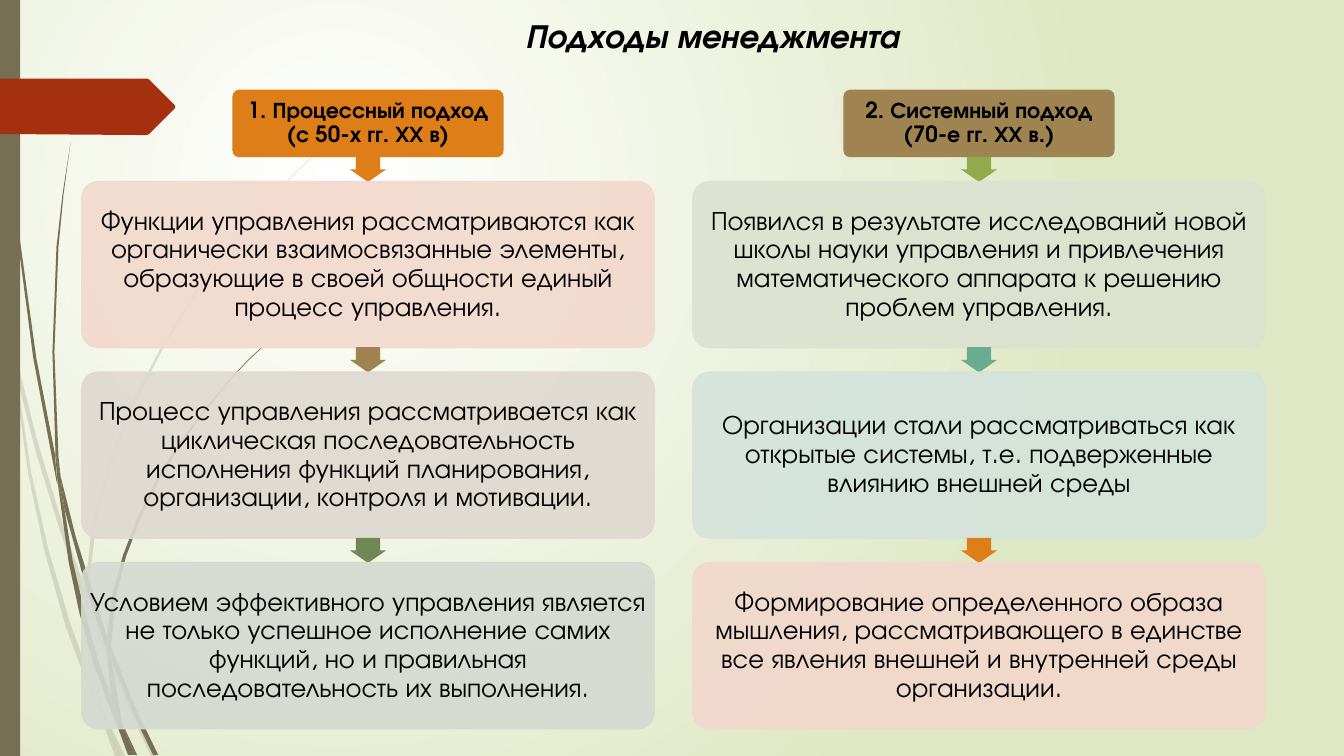
from lxml import etree
from pptx import Presentation
from pptx import util as u
from pptx.dml.color import RGBColor
from pptx.enum import shapes, text
from pptx.oxml import ns

COLORS = {
    "white": "FFFFFF", "lime": "DFE8C4", "ink": "000000", "stalk": "766F54", "red": "A53010",
    "orange": "DE7E18", "brown": "9F8351", "moss": "728653", "green": "92AA4C", "teal": "6AAC91",
    "pale rose": "F2D8CC", "pale sand": "DFD9D0", "pale grey": "D5D9D1",
    "pale olive": "DCE2D0", "pale mint": "D4E3DC",
}

# Outlines of the grass: x, y pairs in inches
PALE_GRASS = [
    [.11, 3.5, .09, 3.22, 0, 2.82, 0, 2.99, .1, 3.44],
    [.58, 5.22, .84, 5.99, .85, 5.86, .62, 5.2, .36, 4.34, .14, 3.45, .17, 3.76, .36, 4.5],
    [.92, 6.07, .88, 5.96, .88, 6.1, 1.23, 6.94, 1.5, 7.5, 1.55, 7.5, 1.27, 6.92],
    [1.19, 7.5, 1.24, 7.5, 1.05, 7.11],
    [.93, 6.83, .7, 6.19, .48, 5.45, .31, 4.69, .17, 3.76, .11, 3.5, .28, 4.7, .44, 5.46,
     .65, 6.21, .92, 6.93, 1.01, 7.14, .99, 7.07],
    [.84, 5.99, .87, 6.46, .93, 6.83, .96, 6.92, 1.05, 7.11, 1.03, 7.06, .91, 6.46, .88, 6.1,
     .88, 6.08],
    [.88, 5.84, .95, 5.22, 1.1, 4.62, 1.32, 4.04, 1.6, 3.49, 1.92, 2.96, 2.29, 2.45, 2.68, 1.98,
     2.9, 1.75, 3.12, 1.54, 3.12, 1.53, 2.89, 1.75, 2.68, 1.97, 2.28, 2.44, 1.9, 2.95,
     1.58, 3.48, 1.29, 4.03, 1.07, 4.61, .91, 5.22, .85, 5.84, .85, 5.86, .88, 5.96],
    [1.01, 7.14, 1.14, 7.5, 1.19, 7.5],
    [.88, 6.08, .88, 6.1, .88, 5.96, .85, 5.86, .84, 5.99],
    [.96, 6.92, .93, 6.83, .99, 7.07, 1.01, 7.14, 1.19, 7.5, 1.05, 7.11],
]
DARK_GRASS = [
    [.07, 1.1, .17, 2.33, .33, 3.55, .56, 4.77, .57, 4.81, .55, 4.57, .55, 4.53, .36, 3.55,
     .19, 2.32, .08, 1.09, .05, .48, .04, 0, .03, 0, .04, .48],
    [.88, 5.92, 1.06, 6.45, 1.06, 6.33, 1.06, 6.31, .93, 5.9, .75, 5.32, .6, 4.72, .64, 5.05],
    [1.13, 6.49, 1.1, 6.41, 1.11, 6.56, 1.32, 7.08, 1.52, 7.49, 1.57, 7.49, 1.36, 7.06],
    [1.1, 6.91, .98, 6.57, .84, 6.07, .72, 5.56, .64, 5.05, .57, 4.77, .68, 5.57, .79, 6.09,
     .93, 6.59, 1.11, 7.08, 1.17, 7.22, 1.16, 7.17],
    [.6, 4.72, .58, 4.53, .54, 3.49, .58, 2.45, .63, 1.93, .7, 1.41, .62, 1.93, .56, 2.45,
     .52, 3.49, .55, 4.49],
    [1.33, 7.49, 1.36, 7.49, 1.22, 7.19],
    [.57, 4.77, .64, 5.05, .6, 4.72, .55, 4.49, .55, 4.53],
    [1.11, 6.33, 1.15, 5.92, 1.25, 5.52, 1.4, 5.13, 1.58, 4.76, 1.8, 4.4, 2.05, 4.06, 2.31, 3.74,
     2.45, 3.59, 2.61, 3.44, 2.6, 3.44, 2.45, 3.58, 2.31, 3.73, 2.04, 4.05, 1.78, 4.39,
     1.56, 4.74, 1.37, 5.12, 1.22, 5.51, 1.11, 5.91, 1.06, 6.31, 1.1, 6.41],
    [1.17, 7.22, 1.27, 7.49, 1.31, 7.49],
    [1.06, 6.45, 1.1, 6.91, 1.16, 7.06, 1.22, 7.19, 1.21, 7.16, 1.11, 6.56, 1.09, 6.51],
    [1.06, 6.45, 1.09, 6.51, 1.11, 6.56, 1.1, 6.41, 1.06, 6.31, 1.06, 6.33],
    [1.16, 7.06, 1.1, 6.91, 1.16, 7.17, 1.17, 7.22, 1.3, 7.49, 1.33, 7.49, 1.22, 7.19],
]
BANNER = [1.73, 1.08, 1.48, 1.33, 1.46, 1.34, 1.36, 1.34, 0, 1.33, 0, .78, 1.46, .78, 1.48, .79,
          1.73, 1.04, 1.74, 1.06]

# Each approach: left edge, heading, heading colour, steps (arrow colour, card colour, wording)
APPROACHES = [
    (0.81, "1. Процессный подход (с 50-х гг. ХХ в)", "orange", [
        ("orange", "pale rose", "Функции управления рассматриваются как органически взаимосвязанные "
         "элементы, образующие в своей общности единый процесс управления."),
        ("brown", "pale sand", "Процесс управления рассматривается как циклическая "
         "последовательность исполнения функций планирования, организации, контроля и мотивации."),
        ("moss", "pale grey", "Условием эффективного управления является не только успешное "
         "исполнение самих функций, но и правильная последовательность их выполнения."),
    ]),
    (6.87, "2. Системный подход (70-е гг. ХХ в.)", "brown", [
        ("green", "pale olive", "Появился в результате исследований новой школы науки управления "
         "и привлечения математического аппарата к решению проблем управления."),
        ("teal", "pale mint", "Организации стали рассматриваться как открытые системы, "
         "т.е. подверженные влиянию внешней среды"),
        ("orange", "pale rose", "Формирование определенного образа мышления, рассматривающего "
         "в единстве все явления внешней и внутренней среды организации."),
    ]),
]
CARD_W, CARD_H, CARD_TOP, PITCH = 5.68, 1.65, 1.8, 1.89
HEAD_W, HEAD_H, HEAD_TOP = 2.69, 0.67, 0.89
ARROW_W, ARROW_H, ARROW_TOP = 0.25, 0.36, 1.5


def rgb(color):
    return RGBColor.from_string(COLORS[color])


def write(frame, words, size, bold=False, italic=False, align=text.PP_ALIGN.LEFT, spacing=1.0):
    paragraph = frame.paragraphs[0]
    paragraph.alignment = align
    paragraph.line_spacing = spacing
    run = paragraph.add_run()
    run.text = words
    font = run.font
    font.name, font.size, font.bold, font.italic = "TeX Gyre Adventor", u.Pt(size), bold, italic
    font.color.rgb = rgb("ink")


class Board:
    def __init__(self, slide):
        self.slide = slide

    def backdrop(self, inner, outer):
        """Circular gradient spreading from the upper left quarter."""
        fill = self.slide.background.fill
        fill.gradient()
        for stop, color, position in zip(fill.gradient_stops, (inner, outer), (0, 1)):
            stop.color.rgb, stop.position = rgb(color), position
        gradient = self.slide.element.find(".//" + ns.qn("a:gradFill"))
        gradient.remove(gradient.find(ns.qn("a:lin")))
        circle = etree.SubElement(gradient, ns.qn("a:path"), path="circle")
        etree.SubElement(circle, ns.qn("a:fillToRect"), l="50000", t="50000", r="100000", b="100000")

    def paint(self, shape, color, opacity=100, outlined=False):
        shape.shadow.inherit = False
        shape.fill.solid()
        shape.fill.fore_color.rgb = rgb(color)
        if outlined:
            shape.line.color.rgb = rgb(color)
            shape.line.width = u.Pt(0.75)
        else:
            shape.line.fill.background()
        if opacity < 100:
            for tint in shape.element.spPr.iter(ns.qn("a:srgbClr")):
                etree.SubElement(tint, ns.qn("a:alpha"), val=str(opacity * 1000))

    def outline(self, numbers, color, opacity=100):
        points = [(u.Inches(x), u.Inches(y)) for x, y in zip(numbers[::2], numbers[1::2])]
        builder = self.slide.shapes.build_freeform(*points[0])
        builder.add_line_segments(points[1:], close=True)
        self.paint(builder.convert_to_shape(), color, opacity)

    def preset(self, kind, left, top, width, height, color, **look):
        shape = self.slide.shapes.add_shape(kind, *map(u.Inches, (left, top, width, height)))
        self.paint(shape, color, **look)
        return shape

    def card(self, left, top, width, height, color, words, size, inset, bold=False, **look):
        card = self.preset(shapes.MSO_SHAPE.ROUNDED_RECTANGLE, left, top, width, height, color, **look)
        card.adjustments[0] = 0.1
        frame = card.text_frame
        frame.word_wrap = True
        frame.vertical_anchor = text.MSO_ANCHOR.MIDDLE
        frame.margin_left = frame.margin_right = u.Inches(inset)
        frame.margin_top = frame.margin_bottom = u.Inches(inset)
        write(frame, words, size, bold=bold, align=text.PP_ALIGN.CENTER, spacing=0.9)

    def down_arrow(self, center, top, color):
        arrow = self.preset(shapes.MSO_SHAPE.RIGHT_ARROW, center - ARROW_W / 2, top,
                            ARROW_W, ARROW_H, color)
        arrow.rotation = 90
        arrow.adjustments[0], arrow.adjustments[1] = 0.667, 0.5

    def title(self, words):
        box = self.slide.shapes.add_textbox(*map(u.Inches, (5.11, 0.1, 4.33, 0.5)))
        box.text_frame.word_wrap = True
        write(box.text_frame, words, 24, bold=True, italic=True)

    def approach(self, left, heading, color, steps):
        center = left + CARD_W / 2
        self.card(center - HEAD_W / 2, HEAD_TOP, HEAD_W, HEAD_H, color, heading, 16, 0.02, bold=True)
        for row, (arrow_color, card_color, words) in enumerate(steps):
            self.down_arrow(center, ARROW_TOP + row * PITCH, arrow_color)
            self.card(left, CARD_TOP + row * PITCH, CARD_W, CARD_H, card_color, words, 19, 0.03,
                      opacity=90, outlined=True)


def main():
    deck = Presentation()
    deck.slide_width, deck.slide_height = u.Inches(13.33), u.Inches(7.5)
    board = Board(deck.slides.add_slide(deck.slide_layouts[6]))
    board.backdrop("white", "lime")
    for blade in PALE_GRASS:
        board.outline(blade, "stalk", opacity=20)
    for blade in DARK_GRASS:
        board.outline(blade, "stalk")
    board.preset(shapes.MSO_SHAPE.RECTANGLE, 0, 0, 0.2, 7.5, "stalk")
    board.outline(BANNER, "red")
    board.title("Подходы менеджмента")
    for approach in APPROACHES:
        board.approach(*approach)
    deck.save("out.pptx")


if __name__ == "__main__":
    main()
